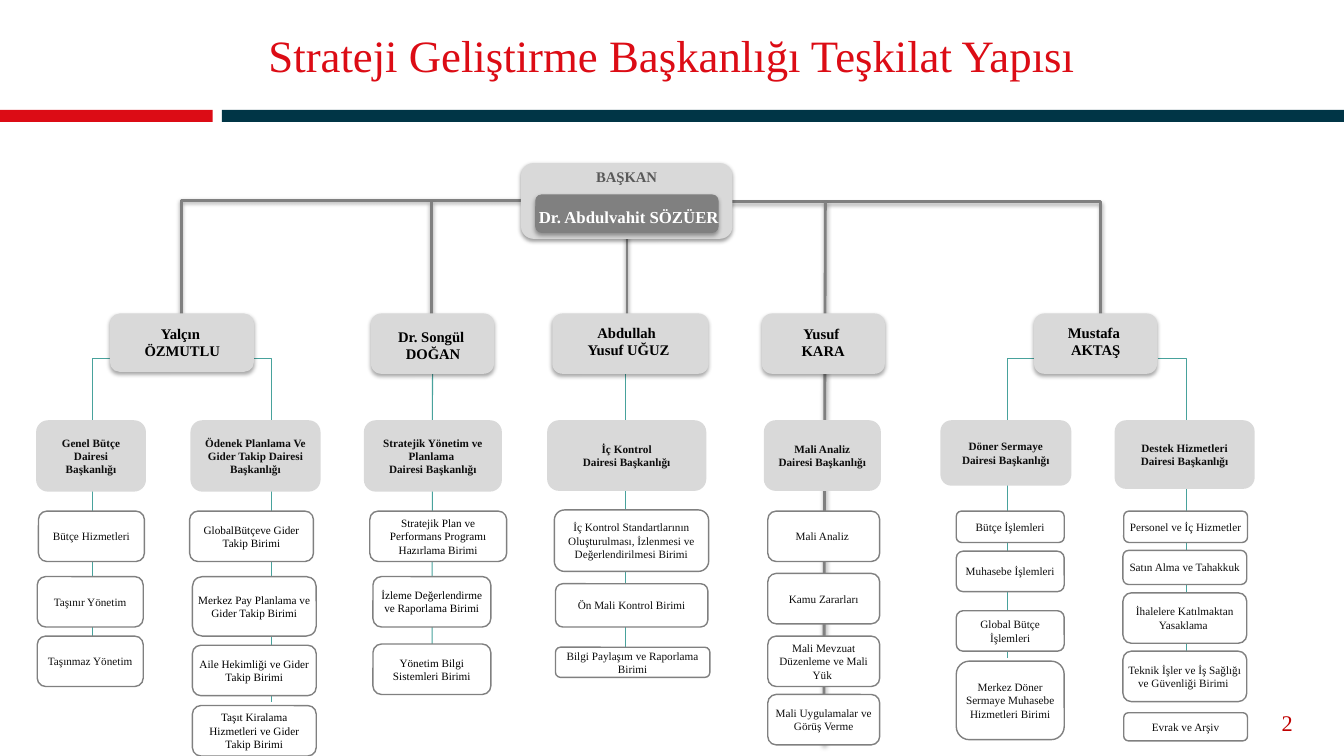
from lxml import etree
from pptx import Presentation
from pptx import util as u
from pptx.dml import color
from pptx.enum import shapes, text
from pptx.oxml import ns

FACE = "Times New Roman"
RED, NAVY, TEAL = "DC0C15", "003546", "48A29C"
GREY, PALE, WHITE = "808080", "D9D9D9", "FFFFFF"
INK, BLACK = "0D0D0D", "000000"
RECT = shapes.MSO_SHAPE.RECTANGLE
ROUND = shapes.MSO_SHAPE.ROUNDED_RECTANGLE

BARS = [(0, 5.36, RED), (5.59, 28.28, NAVY)]

ELBOWS = [
    (26.09, 9.04, 25.4, 16.59, TEAL),
    (29.18, 9.04, 29.9, 17.68, TEAL),
    (16.46, 9.04, 15.77, 16.59, TEAL),
    (3.02, 9.04, 2.34, 16.59, TEAL),
    (6.12, 9.04, 6.84, 17.68, TEAL),
    (16.56, 5.08, 27.74, 8.48, GREY),
    (13.13, 5.05, 4.57, 8.05, GREY),
]

CHIEFS = [
    (2.77, 3.63, 1.47, 2.87, 8.05, 3.45, "Yalçın \nÖZMUTLU"),
    (9.35, 3.1, 1.52, 9.19, 8.13, 3.45, "Dr. Songül \nDOĞAN"),
    (13.92, 3.94, 1.52, 14, 8.03, 3.68, "Abdullah \nYusuf UĞUZ"),
    (19.2, 3.1, 1.52, 19.02, 8.05, 3.45, "Yusuf \nKARA"),
    (26.06, 3.1, 1.52, 25.86, 8.03, 3.51, "Mustafa \nAKTAŞ"),
]

OFFICES = [
    (0.91, 2.77, 1.8, "Genel Bütçe\nDairesi Başkanlığı", INK, [
        (0.97, 12.88, 2.67, 1.27, "Bütçe Hizmetleri"),
        (0.94, 14.53, 2.67, 1.27, "Taşınır Yönetim"),
        (0.94, 16.03, 2.67, 1.27, "Taşınmaz Yönetim")]),
    (4.8, 3.28, 1.8, "Ödenek Planlama Ve Gider Takip Dairesi Başkanlığı", BLACK, [
        (4.78, 12.88, 3.12, 1.27, "GlobalBütçeve Gider Takip Birimi"),
        (4.85, 14.53, 3.12, 1.5, "Merkez Pay Planlama ve Gider Takip Birimi"),
        (4.85, 16.26, 3.12, 1.27, "Aile Hekimliği ve Gider Takip Birimi"),
        (4.85, 17.78, 3.12, 1.27, "Taşıt Kiralama Hizmetleri ve Gider Takip Birimi")]),
    (9.17, 3.48, 1.8, "Stratejik Yönetim ve Planlama \nDairesi Başkanlığı", BLACK, [
        (9.32, 12.88, 3.45, 1.27, "Stratejik Plan ve Performans Programı Hazırlama Birimi"),
        (9.4, 14.53, 2.97, 1.27, "İzleme Değerlendirme ve Raporlama Birimi"),
        (9.4, 16.23, 2.97, 1.27, "Yönetim Bilgi Sistemleri Birimi")]),
    (13.79, 4.01, 1.78, "İç Kontrol\nDairesi Başkanlığı", INK, [
        (13.97, 12.85, 3.89, 1.55,
         "İç Kontrol Standartlarının Oluşturulması, İzlenmesi ve Değerlendirilmesi Birimi"),
        (14, 14.71, 3.84, 1.09, "Ön Mali Kontrol Birimi"),
        (14, 16.31, 3.89, 0.76, "Bilgi Paylaşım ve Raporlama Birimi")]),
    (19.25, 2.95, 1.78, "Mali Analiz Dairesi Başkanlığı", INK, [
        (19.35, 12.88, 2.82, 1.27, "Mali Analiz "),
        (19.35, 14.45, 2.82, 1.27, "Kamu Zararları"),
        (19.35, 16.03, 2.82, 1.27, "Mali Mevzuat Düzenleme ve Mali Yük "),
        (19.35, 17.5, 2.82, 1.27, "Mali Uygulamalar ve Görüş Verme")]),
    (23.7, 3.3, 1.65, "Döner Sermaye Dairesi Başkanlığı", INK, [
        (24.1, 12.88, 2.72, 0.79, "Bütçe İşlemleri"),
        (24.1, 13.89, 2.72, 1.02, "Muhasebe İşlemleri"),
        (24.1, 15.39, 2.72, 1.02, "Global Bütçe İşlemleri"),
        (24.1, 16.66, 2.72, 1.98, "Merkez Döner Sermaye Muhasebe Hizmetleri Birimi")]),
    (28.09, 3.53, 1.73, "Destek Hizmetleri Dairesi Başkanlığı", INK, [
        (28.32, 12.88, 3.12, 0.79, "Personel ve İç Hizmetler"),
        (28.3, 13.87, 3.12, 0.86, "Satın Alma ve Tahakkuk"),
        (28.3, 14.94, 3.12, 1.27, "İhalelere Katılmaktan Yasaklama "),
        (28.3, 16.41, 3.12, 1.27, "Teknik İşler ve İş Sağlığı ve Güvenliği Birimi "),
        (28.32, 17.96, 3.12, 0.71, "Evrak ve Arşiv")]),
]


def paint(part, tone):
    part.rgb = color.RGBColor.from_string(tone)


def shade(item, alpha):
    props = item._element.spPr
    tag = ns.qn("a:effectLst")
    list_ = props.find(tag)
    if list_ is None:
        list_ = etree.SubElement(props, tag)
    if alpha:
        drop = etree.SubElement(list_, ns.qn("a:outerShdw"), blurRad=str(u.Pt(3.1)),
                                dist=str(u.Pt(1.6)), dir="5400000", rotWithShape="0")
        tone = etree.SubElement(drop, ns.qn("a:srgbClr"), val=BLACK)
        etree.SubElement(tone, ns.qn("a:alpha"), val=str(alpha * 1000))


def write(item, words, size, tone, bold=False, mid=True, align=text.PP_ALIGN.CENTER):
    frame = item.text_frame
    frame.word_wrap = True
    frame.vertical_anchor = text.MSO_ANCHOR.MIDDLE if mid else text.MSO_ANCHOR.TOP
    frame.text = words
    for para in frame.paragraphs:
        para.alignment = align
        para.font.name = FACE
        para.font.size = u.Pt(size)
        para.font.bold = bold
        paint(para.font.color, tone)


def label(slide, x, y, w, h, words, size, tone, **style):
    item = slide.shapes.add_textbox(u.Cm(x), u.Cm(y), u.Cm(w), u.Cm(h))
    write(item, words, size, tone, **style)


def box(slide, x, y, w, h, fill, form=ROUND, edge=None, alpha=0):
    item = slide.shapes.add_shape(form, u.Cm(x), u.Cm(y), u.Cm(w), u.Cm(h))
    item.shadow.inherit = False
    item.fill.solid()
    paint(item.fill.fore_color, fill)
    if edge:
        paint(item.line.color, edge)
        item.line.width = u.Pt(1)
    else:
        item.line.fill.background()
    if alpha:
        shade(item, alpha)
    return item


def link(slide, x, y, x2, y2, tone, bent=False):
    kind = shapes.MSO_CONNECTOR.ELBOW if bent else shapes.MSO_CONNECTOR.STRAIGHT
    item = slide.shapes.add_connector(kind, u.Cm(x), u.Cm(y), u.Cm(x2), u.Cm(y2))
    if bent:
        item._element.spPr.find(ns.qn("a:prstGeom")).set("prst", "bentConnector2")
    paint(item.line.color, tone)
    item.line.width = u.Pt(2 if tone == GREY else 0.75)
    shade(item, 38 if tone == GREY else 0)
    return item


def chief(slide, x, w, h, left, top, wide, name):
    item = box(slide, x, 7.9, w, h, PALE, alpha=35)
    label(slide, left, top, wide, 1.14, name, 10.5, BLACK, bold=True, mid=False)
    return item


def unit(slide, x, y, w, h, name, ink):
    item = box(slide, x, y, w, h, WHITE, edge=GREY)
    item.text_frame.margin_left = item.text_frame.margin_right = u.Cm(0.05)
    write(item, name, 8, ink)
    return item


def office(slide, x, w, h, name, ink, units):
    write(box(slide, x, 10.59, w, h, PALE), name, 8, INK, bold=True)
    return [unit(slide, *row, ink) for row in units][-1]


def head(slide):
    item = box(slide, 13.13, 4.11, 5.33, 1.91, PALE, alpha=38)
    item.text_frame.margin_top = u.Cm(0.03)
    write(item, "BAŞKAN", 10.5, "595959", bold=True, mid=False)
    box(slide, 13.49, 4.9, 4.62, 0.97, GREY, alpha=35)
    label(slide, 13.26, 5.08, 5.18, 0.76, "Dr. Abdulvahit SÖZÜER", 12, WHITE,
          bold=True, mid=False)


def main():
    deck = Presentation()
    deck.slide_width, deck.slide_height = u.Cm(33.87), u.Cm(19.05)
    slide = deck.slides.add_slide(deck.slide_layouts[6])

    for x, w, tone in BARS:
        box(slide, x, 2.77, w, 0.3, tone, form=RECT)
    label(slide, 0, 0.36, 33.87, 2.03, "Strateji Geliştirme Başkanlığı Teşkilat Yapısı", 32, RED)
    label(slide, 32.05, 17.75, 1.37, 1.02, "2", 16, "C00000", mid=False,
          align=text.PP_ALIGN.LEFT)

    for row in ELBOWS:
        link(slide, *row, bent=True)
    for x in (10.87, 15.8):
        link(slide, x, 5.08, x, 8.38, GREY)
    kara = link(slide, 20.8, 5.08, 20.76, 18.77, GREY)
    dogan = link(slide, 10.9, 9.42, 10.88, 17.5, TEAL)

    head(slide)
    tops = [chief(slide, *row) for row in CHIEFS]
    ends = [office(slide, *row) for row in OFFICES]
    dogan.begin_connect(tops[1], 2)
    dogan.end_connect(ends[2], 2)
    kara.end_connect(ends[4], 2)

    deck.save("out.pptx")


if __name__ == "__main__":
    main()
